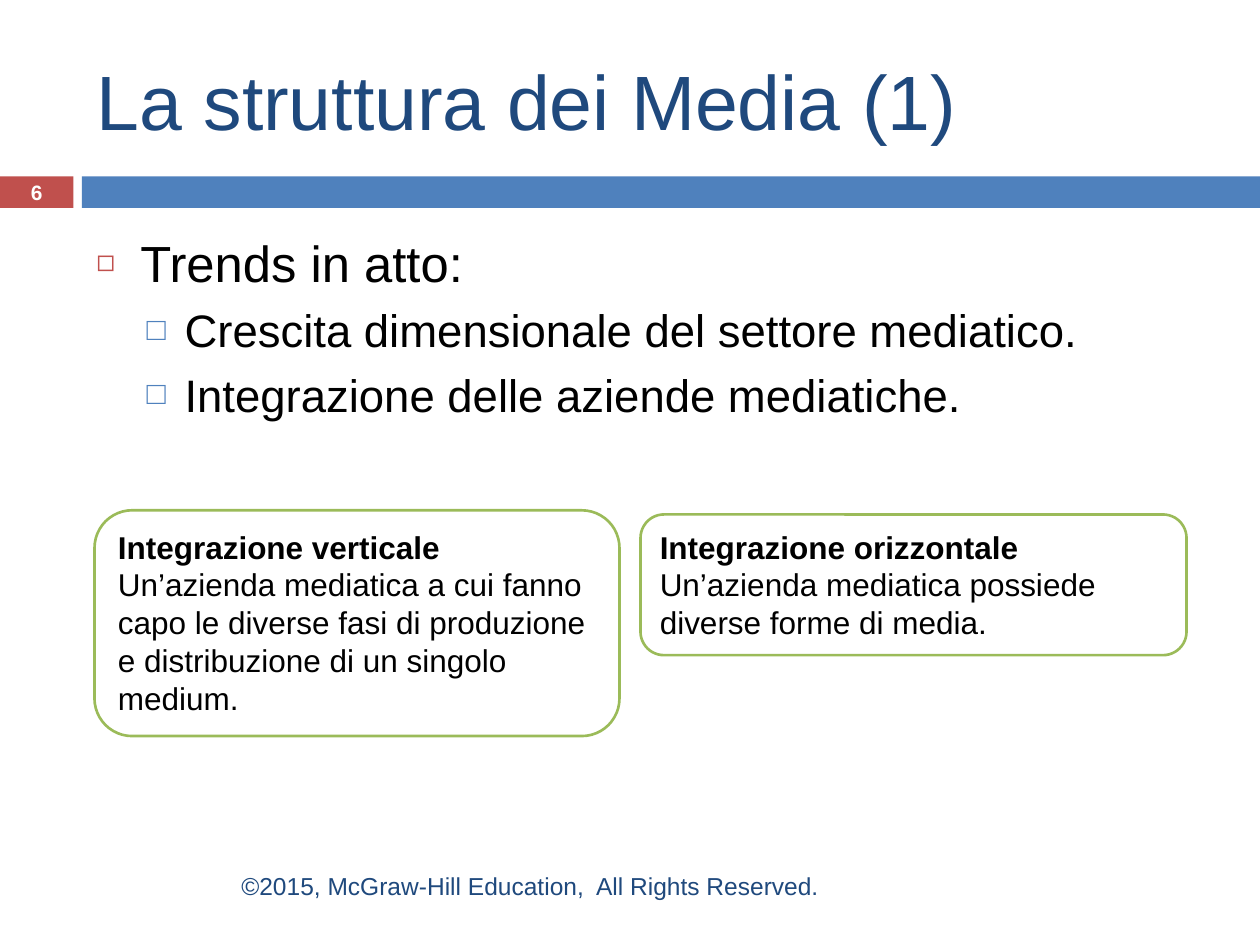
from lxml.etree import SubElement
from pptx import Presentation
from pptx.dml.color import RGBColor
from pptx.enum.shapes import MSO_SHAPE
from pptx.enum.text import MSO_ANCHOR, MSO_AUTO_SIZE, PP_ALIGN
from pptx.oxml.ns import qn
from pptx.util import Inches, Pt


class MediaSlide:
    """Style and current slide, measured on a grid of 120 columns by 90 rows."""

    COLORS = {"navy": "1F497D", "blue": "4F81BD", "red": "C0504D",
              "green": "9BBB59", "white": "FFFFFF", "black": "000000"}
    FONT = "Arial"

    def __init__(self, deck):
        self.column, self.row = deck.slide_width / 120, deck.slide_height / 90
        self.page = deck.slides.add_slide(deck.slide_layouts[5])

    def area(self, left, top, width, height):
        return (round(left * self.column), round(top * self.row),
                round(width * self.column), round(height * self.row))

    def color(self, name):
        return RGBColor.from_string(self.COLORS[name])

    def add_span(self, para, text, size, color, bold=False):
        span = para.add_run()
        span.text = text
        span.font.name, span.font.size, span.font.bold = self.FONT, Pt(size), bold
        span.font.color.rgb = self.color(color)

    def title(self, text, grid):
        box = self.page.shapes.title
        box.left, box.top, box.width, box.height = self.area(*grid)
        frame = box.text_frame
        frame.word_wrap, frame.vertical_anchor = True, MSO_ANCHOR.MIDDLE
        para = frame.paragraphs[0]
        para.alignment = PP_ALIGN.LEFT
        self.add_span(para, text, 44, "navy")

    def shape(self, grid, fill, line=None, kind=MSO_SHAPE.RECTANGLE):
        shape = self.page.shapes.add_shape(kind, *self.area(*grid))
        shape.shadow.inherit = False
        shape.fill.solid()
        shape.fill.fore_color.rgb = self.color(fill)
        if line:
            shape.line.color.rgb = self.color(line)
            shape.line.width = Pt(1.5)
        else:
            shape.line.fill.background()
        return shape

    def number(self, text, grid):
        frame = self.shape(grid, "red").text_frame
        frame.margin_top = frame.margin_bottom = 0
        para = frame.paragraphs[0]
        para.alignment = PP_ALIGN.CENTER
        self.add_span(para, text, 11.9, "white", bold=True)

    def card(self, heading, text, grid):
        frame = self.shape(grid, "white", "green", MSO_SHAPE.ROUNDED_RECTANGLE).text_frame
        frame.word_wrap, frame.vertical_anchor = True, MSO_ANCHOR.TOP
        frame.auto_size = MSO_AUTO_SIZE.SHAPE_TO_FIT_TEXT
        for words, bold in ((heading, True), (text, False)):
            para = frame.paragraphs[0] if bold else frame.add_paragraph()
            para.alignment = PP_ALIGN.LEFT
            self.add_span(para, words, 18, "black", bold)

    def text_box(self, grid):
        frame = self.page.shapes.add_textbox(*self.area(*grid)).text_frame
        frame.word_wrap = True
        return frame

    def bullet(self, para, symbol, color, percent, margin, hanging):
        properties = para._p.get_or_add_pPr()
        properties.set("marL", str(Inches(margin)))
        properties.set("indent", str(-Inches(hanging)))
        tint = SubElement(properties, qn("a:buClr"))
        SubElement(tint, qn("a:srgbClr"), val=self.COLORS[color])
        SubElement(properties, qn("a:buSzPct"), val=str(percent * 1000))
        SubElement(properties, qn("a:buFont"), typeface=self.FONT)
        SubElement(properties, qn("a:buChar"), char=symbol)

    def outline(self, heading, points, grid):
        frame = self.text_box(grid)
        frame.margin_top = Inches(0.09)
        para = frame.paragraphs[0]
        self.bullet(para, "◻", "red", 60, 0.35, 0.35)
        self.add_span(para, heading, 29, "black")
        for point in points:
            para = frame.add_paragraph()
            para.level = 1
            self.bullet(para, "□", "blue", 70, 0.7, 0.3)
            para.space_before = Pt(5.5)
            self.add_span(para, point, 26, "black")

    def footer(self, text, grid):
        frame = self.text_box(grid)
        frame.vertical_anchor = MSO_ANCHOR.MIDDLE
        para = frame.paragraphs[0]
        para.alignment = PP_ALIGN.RIGHT
        self.add_span(para, text, 14, "navy")


def main():
    deck = Presentation()
    deck.slide_width, deck.slide_height = Inches(10), Inches(7.5)
    slide = MediaSlide(deck)
    slide.title("La struttura dei Media (1)", (8, 3, 107, 13))
    slide.number("6", (0, 16.8, 7, 3))
    slide.shape((7.8, 16.8, 112.2, 3), "blue")
    slide.outline("Trends in atto:",
                  ["Crescita dimensionale del settore mediatico.",
                   "Integrazione delle aziende mediatiche."], (8, 21, 107, 59))
    slide.card("Integrazione verticale",
               "Un’azienda mediatica a cui fanno capo le diverse fasi di produzione "
               "e distribuzione di un singolo medium.", (9, 48.6, 50, 21.5))
    slide.card("Integrazione orizzontale",
               "Un’azienda mediatica possiede diverse forme di media.", (61, 49, 52, 13.4))
    slide.footer("©2015, McGraw-Hill Education,  All Rights Reserved.", (8, 82, 71.2, 4.8))
    deck.save("out.pptx")


if __name__ == "__main__":
    main()
